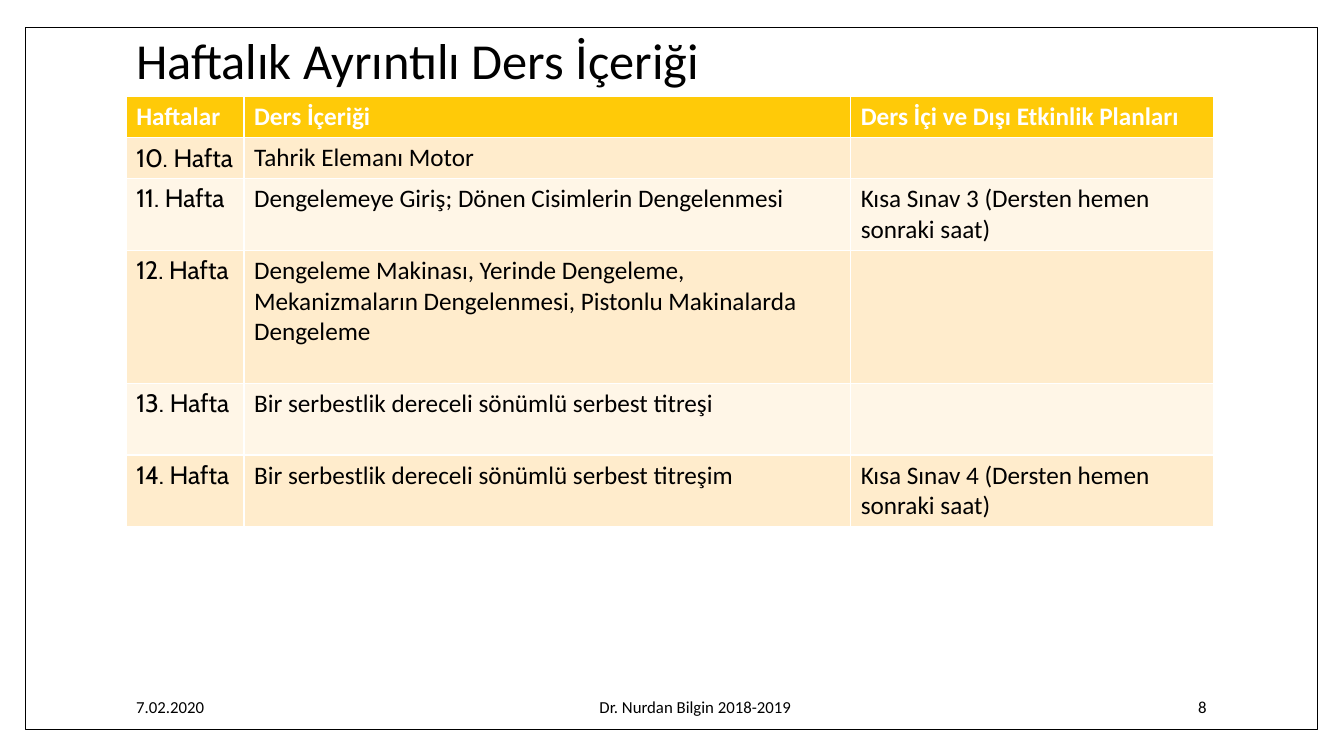
from dataclasses import dataclass

import pptx
import pptx.dml.color
import pptx.enum.shapes
import pptx.enum.text
import pptx.slide
import pptx.text.text
import pptx.util

Cm = pptx.util.Cm
Align = pptx.enum.text.PP_ALIGN
Anchor = pptx.enum.text.MSO_ANCHOR


@dataclass(frozen=True)
class Theme:
    white: str = "FFFFFF"
    black: str = "000000"
    header: str = "FFCA08"
    bands: tuple[str, str] = ("FFECCC", "FFF6E7")
    font: str = "Calibri"
    week_font: str = "Cabin"
    title_size: int = 36
    table_size: int = 18
    footer_size: int = 12


@dataclass(frozen=True)
class Label:
    text: str
    left: float
    top: float
    width: float
    height: float
    size: int
    align: Align = Align.LEFT
    line_spacing: float = 1.0


@dataclass(frozen=True)
class Week:
    number: int
    content: str
    height: float
    activity: str = ""


THEME = Theme()
MARGIN = 3.18
CONTENT_WIDTH = 27.43
FOOTER_TOP, FOOTER_HEIGHT = 17.3, 1.02

LABELS = [
    Label("Haftalık Ayrıntılı Ders İçeriği", MARGIN, 1.02, CONTENT_WIDTH, 1.14,
          THEME.title_size, line_spacing=0.9),
    Label("7.02.2020", MARGIN, FOOTER_TOP, 6.48, FOOTER_HEIGHT, THEME.footer_size),
    Label("Dr. Nurdan Bilgin 2018-2019", 10.97, FOOTER_TOP, 13.11, FOOTER_HEIGHT,
          THEME.footer_size, Align.CENTER),
    Label("8", 25.91, FOOTER_TOP, 4.75, FOOTER_HEIGHT, THEME.footer_size, Align.RIGHT),
]

TABLE_TOP = 2.44
COLUMN_WIDTHS = (2.97, 15.29, 9.14)
HEADINGS = ("Haftalar", "Ders İçeriği", "Ders İçi ve Dışı Etkinlik Planları")
SINGLE_ROW, DOUBLE_ROW, TALL_ROW = 1.03, 1.8, 3.36
WEEKS = [
    Week(10, "Tahrik Elemanı Motor", SINGLE_ROW),
    Week(11, "Dengelemeye Giriş; Dönen Cisimlerin Dengelenmesi", DOUBLE_ROW,
         "Kısa Sınav 3 (Dersten hemen sonraki saat)"),
    Week(12, "Dengeleme Makinası, Yerinde Dengeleme, Mekanizmaların Dengelenmesi, "
             "Pistonlu Makinalarda Dengeleme", TALL_ROW),
    Week(13, "Bir serbestlik dereceli sönümlü serbest titreşi", DOUBLE_ROW),
    Week(14, "Bir serbestlik dereceli sönümlü serbest titreşim", DOUBLE_ROW,
         "Kısa Sınav 4 (Dersten hemen sonraki saat)"),
]


def rgb(color: str) -> pptx.dml.color.RGBColor:
    return pptx.dml.color.RGBColor.from_string(color)


def write(frame: pptx.text.text.TextFrame, text: str, size: int, font: str = THEME.font,
          color: str = THEME.black, bold: bool = False) -> None:
    para = frame.paragraphs[0]
    para.text = text
    para.font.name = font
    para.font.size = pptx.util.Pt(size)
    para.font.bold = bold
    para.font.color.rgb = rgb(color)


def add_frame(slide: pptx.slide.Slide) -> None:
    frame = slide.shapes.add_shape(pptx.enum.shapes.MSO_SHAPE.RECTANGLE,
                                   Cm(0.64), Cm(0.69), Cm(32.56), Cm(17.7))
    frame.shadow.inherit = False
    frame.fill.solid()
    frame.fill.fore_color.rgb = rgb(THEME.white)
    frame.line.color.rgb = rgb(THEME.black)
    frame.line.width = pptx.util.Pt(1)


def add_label(slide: pptx.slide.Slide, label: Label) -> None:
    box = slide.shapes.add_textbox(Cm(label.left), Cm(label.top),
                                   Cm(label.width), Cm(label.height))
    box.text_frame.word_wrap = True
    box.text_frame.vertical_anchor = Anchor.MIDDLE
    write(box.text_frame, label.text, label.size)
    para = box.text_frame.paragraphs[0]
    para.alignment = label.align
    para.line_spacing = label.line_spacing


def add_schedule(slide: pptx.slide.Slide) -> None:
    """Add the weekly table; its built-in style supplies the white cell borders."""
    heights = [SINGLE_ROW] + [week.height for week in WEEKS]
    rows = [HEADINGS] + [(f"{week.number}. Hafta", week.content, week.activity)
                         for week in WEEKS]
    table = slide.shapes.add_table(len(rows), len(HEADINGS), Cm(MARGIN), Cm(TABLE_TOP),
                                   Cm(sum(COLUMN_WIDTHS)), Cm(sum(heights))).table
    for column, width in zip(table.columns, COLUMN_WIDTHS):
        column.width = Cm(width)
    for row_index, (texts, height) in enumerate(zip(rows, heights)):
        table.rows[row_index].height = Cm(height)
        is_header = row_index == 0
        fill = THEME.header if is_header else THEME.bands[(row_index - 1) % 2]
        for column_index, text in enumerate(texts):
            cell = table.cell(row_index, column_index)
            cell.fill.solid()
            cell.fill.fore_color.rgb = rgb(fill)
            is_week = column_index == 0 and not is_header
            write(cell.text_frame, text, THEME.table_size,
                  font=THEME.week_font if is_week else THEME.font,
                  color=THEME.white if is_header else THEME.black,
                  bold=is_header)


def main() -> None:
    deck = pptx.Presentation()
    deck.slide_width, deck.slide_height = Cm(33.87), Cm(19.05)
    slide = deck.slides.add_slide(deck.slide_layouts[6])
    add_frame(slide)
    add_schedule(slide)
    for label in LABELS:
        add_label(slide, label)
    deck.save("out.pptx")


if __name__ == "__main__":
    main()
